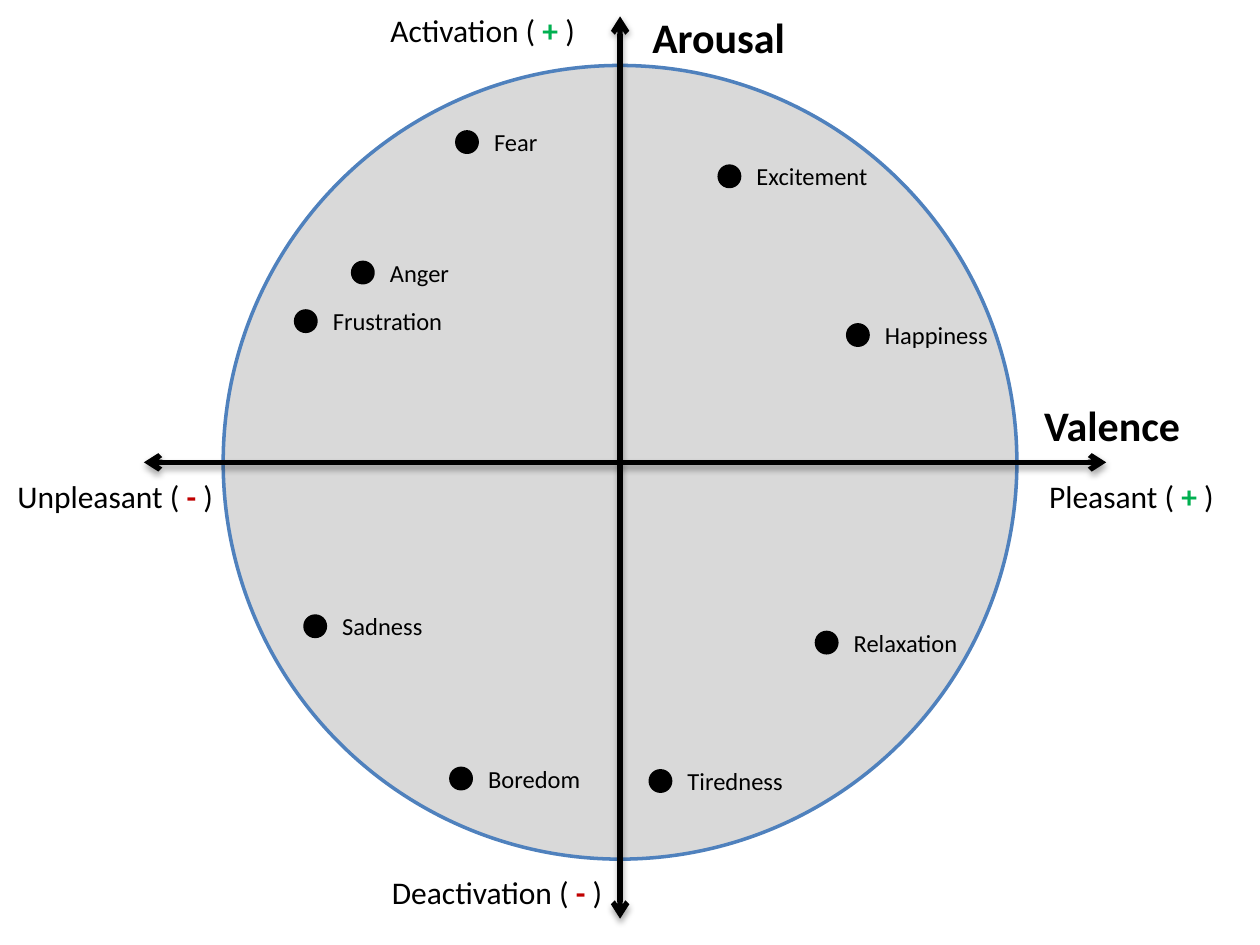
from typing import NamedTuple

import pptx
import pptx.dml.color
import pptx.enum.shapes
import pptx.enum.text
import pptx.oxml
import pptx.oxml.ns
import pptx.util
from pptx.dml.color import RGBColor
from pptx.util import Cm

BLACK = RGBColor(0x00, 0x00, 0x00)
DISC_GRAY = RGBColor(0xD9, 0xD9, 0xD9)
RIM_BLUE = RGBColor(0x4F, 0x81, 0xBD)
SIGN_COLORS = {"+": RGBColor(0x00, 0xB0, 0x50), "-": RGBColor(0xC0, 0x00, 0x00)}

FONT = "Calibri"
CENTER_X, CENTER_Y, DIAMETER = 12.5, 9.32, 16.0
DOT_SIZE = 0.41
LABEL_DX, LABEL_DY = 0.5, -0.22


class Emotion(NamedTuple):
    """An emotion and the top left corner of its dot, in centimetres."""
    name: str
    left: float
    top: float


class AxisTitle(NamedTuple):
    text: str
    left: float
    top: float
    width: float


class AxisEnd(NamedTuple):
    word: str
    sign: str
    left: float
    top: float
    width: float


EMOTIONS = [
    Emotion("Excitement", 14.5, 3.35),
    Emotion("Happiness", 17.09, 6.55),
    Emotion("Tiredness", 13.11, 15.54),
    Emotion("Boredom", 9.09, 15.49),
    Emotion("Sadness", 6.15, 12.42),
    Emotion("Anger", 7.11, 5.29),
    Emotion("Frustration", 5.96, 6.27),
    Emotion("Fear", 9.21, 2.66),
    Emotion("Relaxation", 16.46, 12.75),
]
AXIS_TITLES = [
    AxisTitle("Valence", 20.8, 7.92, 3.96),
    AxisTitle("Arousal", 12.9, 0.1, 4.11),
]
AXIS_ENDS = [
    AxisEnd("Pleasant", "+", 20.9, 9.5, 3.99),
    AxisEnd("Unpleasant", "-", 0.1, 9.5, 4.6),
    AxisEnd("Activation", "+", 7.62, 0.1, 4.47),
    AxisEnd("Deactivation", "-", 7.65, 17.48, 4.85),
]


def add_circle(page, left: float, top: float, size: float,
               fill: RGBColor, line: RGBColor) -> None:
    circle = page.shapes.add_shape(pptx.enum.shapes.MSO_SHAPE.OVAL,
                                   Cm(left), Cm(top), Cm(size), Cm(size))
    circle.shadow.inherit = False
    circle.fill.solid()
    circle.fill.fore_color.rgb = fill
    circle.line.color.rgb = line
    circle.line.width = pptx.util.Pt(2)


def add_axis(page, x1: float, y1: float, x2: float, y2: float) -> None:
    """Draw a double-headed arrow with a soft shadow below it."""
    axis = page.shapes.add_connector(pptx.enum.shapes.MSO_CONNECTOR.STRAIGHT,
                                     Cm(x1), Cm(y1), Cm(x2), Cm(y2))
    axis.line.color.rgb = BLACK
    axis.line.width = pptx.util.Pt(3)
    namespace = pptx.oxml.ns.nsdecls("a")
    line = axis.line._get_or_add_ln()
    for end in ("headEnd", "tailEnd"):
        line.append(pptx.oxml.parse_xml(f'<a:{end} {namespace} type="arrow"/>'))
    axis._element.spPr.append(pptx.oxml.parse_xml(
        f'<a:effectLst {namespace}>'
        '<a:outerShdw blurRad="40000" dist="23000" dir="5400000" rotWithShape="0">'
        '<a:srgbClr val="000000"><a:alpha val="35000"/></a:srgbClr>'
        '</a:outerShdw></a:effectLst>'))


def add_text(page, spans: list[str], left: float, top: float, width: float,
             height: float, size: int, bold: bool = False) -> None:
    """Add one line of text; a span that is a sign is bold and coloured."""
    box = page.shapes.add_textbox(Cm(left), Cm(top), Cm(width), Cm(height))
    box.text_frame.word_wrap = True
    box.text_frame.auto_size = pptx.enum.text.MSO_AUTO_SIZE.SHAPE_TO_FIT_TEXT
    para = box.text_frame.paragraphs[0]
    for text in spans:
        span = para.add_run()
        span.text = text
        span.font.name = FONT
        span.font.size = pptx.util.Pt(size)
        span.font.bold = bold or text in SIGN_COLORS
        span.font.color.rgb = SIGN_COLORS.get(text, BLACK)


def main() -> None:
    deck = pptx.Presentation()
    deck.slide_width, deck.slide_height = Cm(25.4), Cm(19.05)
    page = deck.slides.add_slide(deck.slide_layouts[6])

    add_circle(page, CENTER_X - DIAMETER / 2, CENTER_Y - DIAMETER / 2, DIAMETER,
               DISC_GRAY, RIM_BLUE)
    add_axis(page, CENTER_X, 0.33, CENTER_X, 18.52)
    add_axis(page, 2.9, CENTER_Y, 22.3, CENTER_Y)

    for title in AXIS_TITLES:
        add_text(page, [title.text], title.left, title.top, title.width, 1.27, 24, True)
    for end in AXIS_ENDS:
        add_text(page, [f"{end.word} ( ", end.sign, " )"],
                 end.left, end.top, end.width, 1.02, 18)
    for emotion in EMOTIONS:
        add_circle(page, emotion.left, emotion.top, DOT_SIZE, BLACK, BLACK)
        add_text(page, [emotion.name], emotion.left + LABEL_DX,
                 emotion.top + LABEL_DY, 3.4, 0.86, 14)

    deck.save("out.pptx")


if __name__ == "__main__":
    main()
